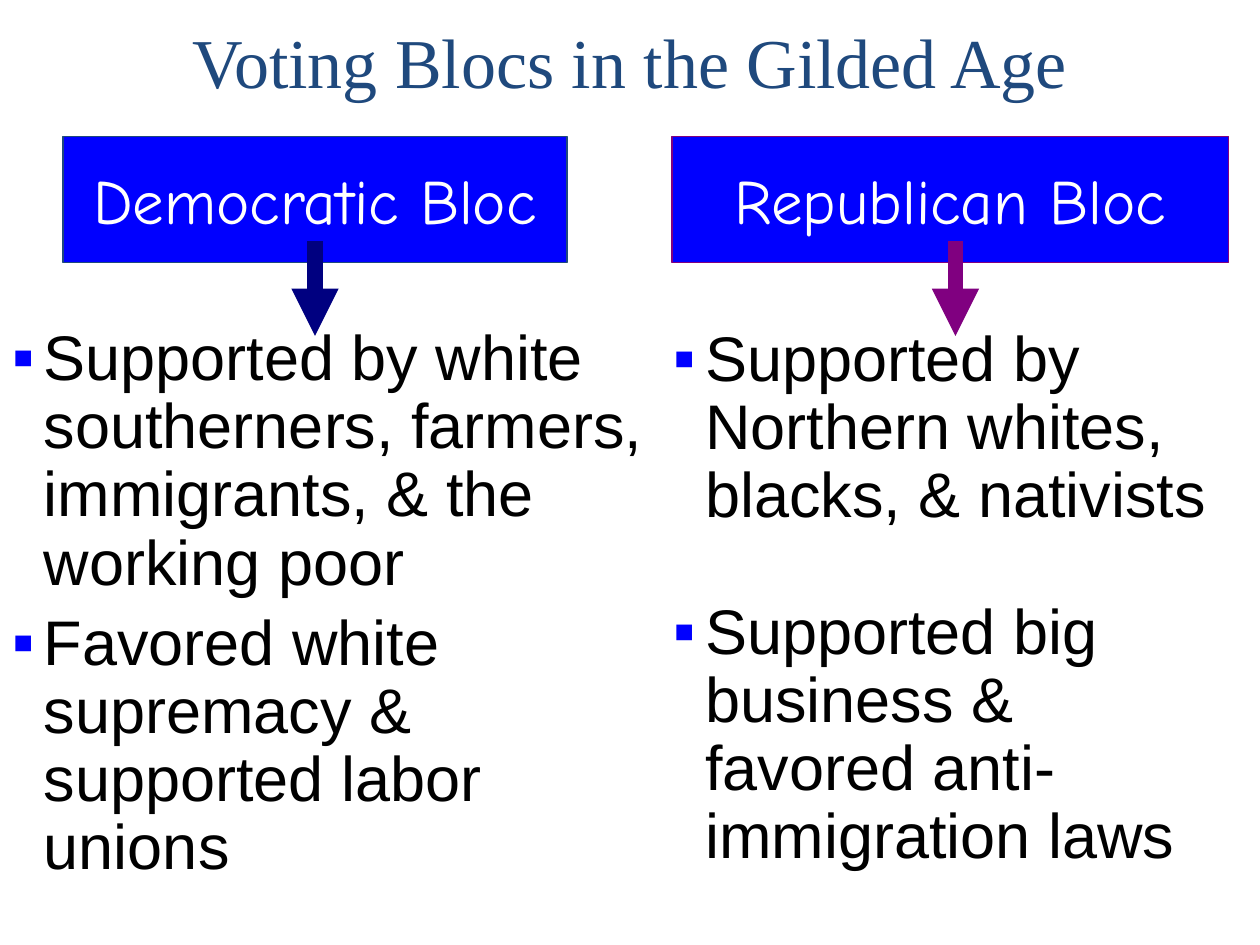
from dataclasses import dataclass

from lxml.etree import SubElement
from pptx import Presentation
from pptx.dml.color import RGBColor as Rgb
from pptx.enum.shapes import MSO_CONNECTOR as Link, MSO_SHAPE as Form
from pptx.enum.text import MSO_ANCHOR as Anchor, MSO_AUTO_SIZE as Fit, PP_ALIGN as Align
from pptx.oxml.ns import qn
from pptx.util import Inches, Pt


@dataclass(frozen=True)
class Theme:
    navy: str = "1F497D"
    blue: str = "0000FF"
    dark: str = "000080"
    plum: str = "800080"
    white: str = "FFFFFF"
    black: str = "000000"
    title: int = 40
    body: int = 36
    gap: float = 7.2
    wide_gap: float = 39
    serif: str = "Times New Roman"
    hand: str = "Comic Neue"
    sans: str = "Arial"


T = Theme()
COLS, ROWS = 120, 90
WIDTH, HEIGHT = Inches(10), Inches(7.5)


def grid(x, y):
    return round(WIDTH * x / COLS), round(HEIGHT * y / ROWS)


def place(x, y, w, h):
    return *grid(x, y), *grid(w, h)


def write(para, text, *, size, font, color, align=Align.LEFT, lead=1.0, before=0):
    para.alignment, para.line_spacing = align, lead
    para.space_before = Pt(before)
    run = para.add_run()
    run.text = text
    run.font.size, run.font.name = Pt(size), font
    run.font.color.rgb = Rgb.from_string(color)


def mark(para):
    """Give the paragraph a square bullet and a hanging indent."""
    props = para._p.get_or_add_pPr()
    props.set("marL", str(Inches(0.25)))
    props.set("indent", str(-Inches(0.25)))
    tint = SubElement(props, qn("a:buClr"))
    SubElement(tint, qn("a:srgbClr"), val=T.blue)
    SubElement(props, qn("a:buFont"), typeface=T.sans)
    SubElement(props, qn("a:buChar"), char="▪")


def banner(slide, text, box, edge):
    shape = slide.shapes.add_shape(Form.RECTANGLE, *place(*box))
    shape.shadow.inherit = False
    shape.fill.solid()
    shape.fill.fore_color.rgb = Rgb.from_string(T.blue)
    shape.line.color.rgb = Rgb.from_string(edge)
    shape.line.width = Pt(0.75)
    frame = shape.text_frame
    frame.word_wrap, frame.vertical_anchor = False, Anchor.MIDDLE
    write(frame.paragraphs[0], text, size=T.body, font=T.hand,
          color=T.white, align=Align.CENTER)


def arrow(slide, x, color):
    """Point down from a banner to the list below it."""
    line = slide.shapes.add_connector(Link.STRAIGHT, *grid(x, 23), *grid(x, 32))
    line.line.color.rgb = Rgb.from_string(color)
    line.line.width = Pt(9)
    SubElement(line.line._get_or_add_ln(), qn("a:tailEnd"), type="triangle")
    SubElement(line._element.spPr, qn("a:effectLst"))


def panel(slide, box):
    frame = slide.shapes.add_textbox(*place(*box)).text_frame
    frame.word_wrap = True
    return frame


def points(slide, items, box, gap):
    frame = panel(slide, box)
    frame.auto_size = Fit.SHAPE_TO_FIT_TEXT
    for i, text in enumerate(items):
        para = frame.add_paragraph() if i else frame.paragraphs[0]
        write(para, text, size=T.body, font=T.sans, color=T.black,
              lead=0.9, before=gap if i else T.gap)
        mark(para)


def title(slide, text):
    frame = panel(slide, (0, 0, COLS, 13))
    frame.vertical_anchor = Anchor.MIDDLE
    write(frame.paragraphs[0], text, size=T.title, font=T.serif,
          color=T.navy, align=Align.CENTER, lead=0.8)


def main():
    deck = Presentation()
    deck.slide_width, deck.slide_height = WIDTH, HEIGHT
    slide = deck.slides.add_slide(deck.slide_layouts[6])

    banner(slide, "Democratic Bloc", (6, 13, 48, 12), T.navy)
    banner(slide, "Republican Bloc", (64, 13, 53, 12), T.plum)
    arrow(slide, 91, T.plum)
    points(slide, (
        "Supported by white southerners, farmers, immigrants, & the working poor",
        "Favored white supremacy & supported labor unions",
    ), (0, 30.5, 63, 54.5), T.gap)
    points(slide, (
        "Supported by Northern whites, blacks, & nativists",
        "Supported big business & favored anti-immigration laws",
    ), (63, 30.6, 54, 53.5), T.wide_gap)
    title(slide, "Voting Blocs in the Gilded Age")
    arrow(slide, 30, T.dark)

    deck.save("out.pptx")


if __name__ == "__main__":
    main()
